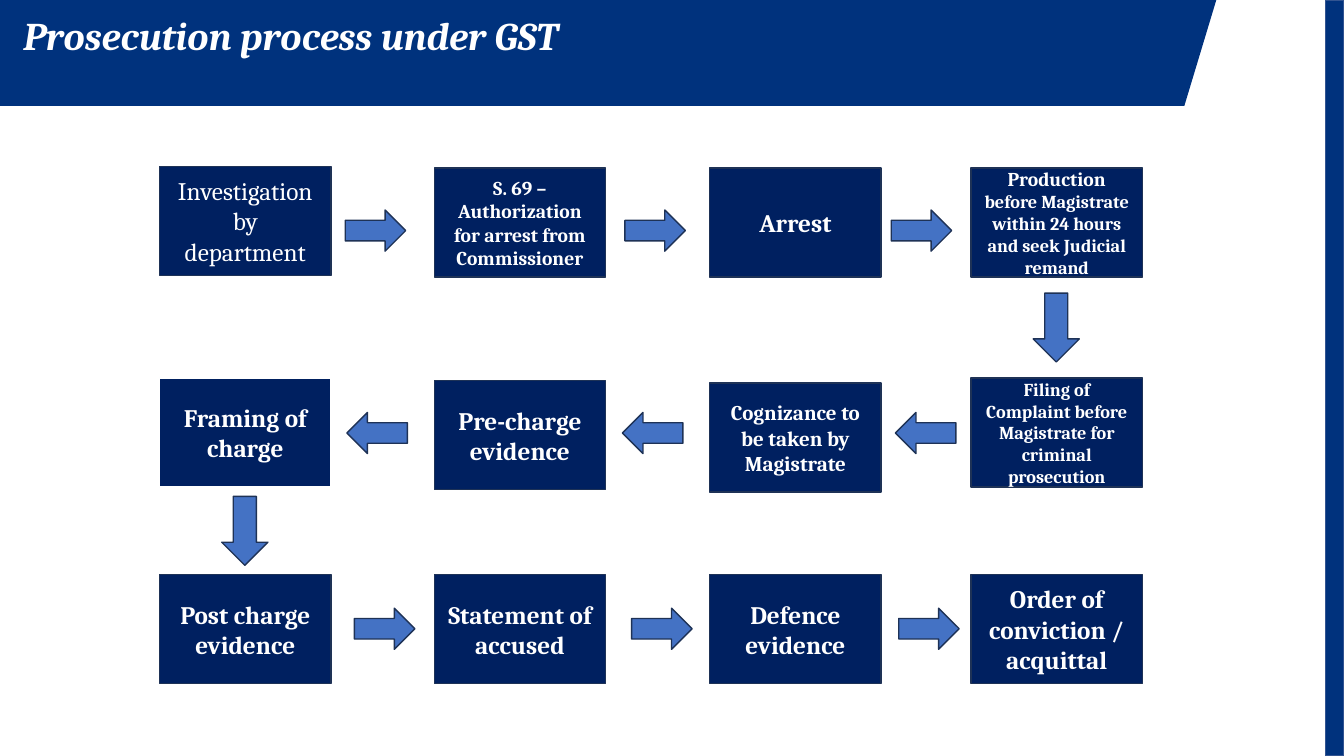
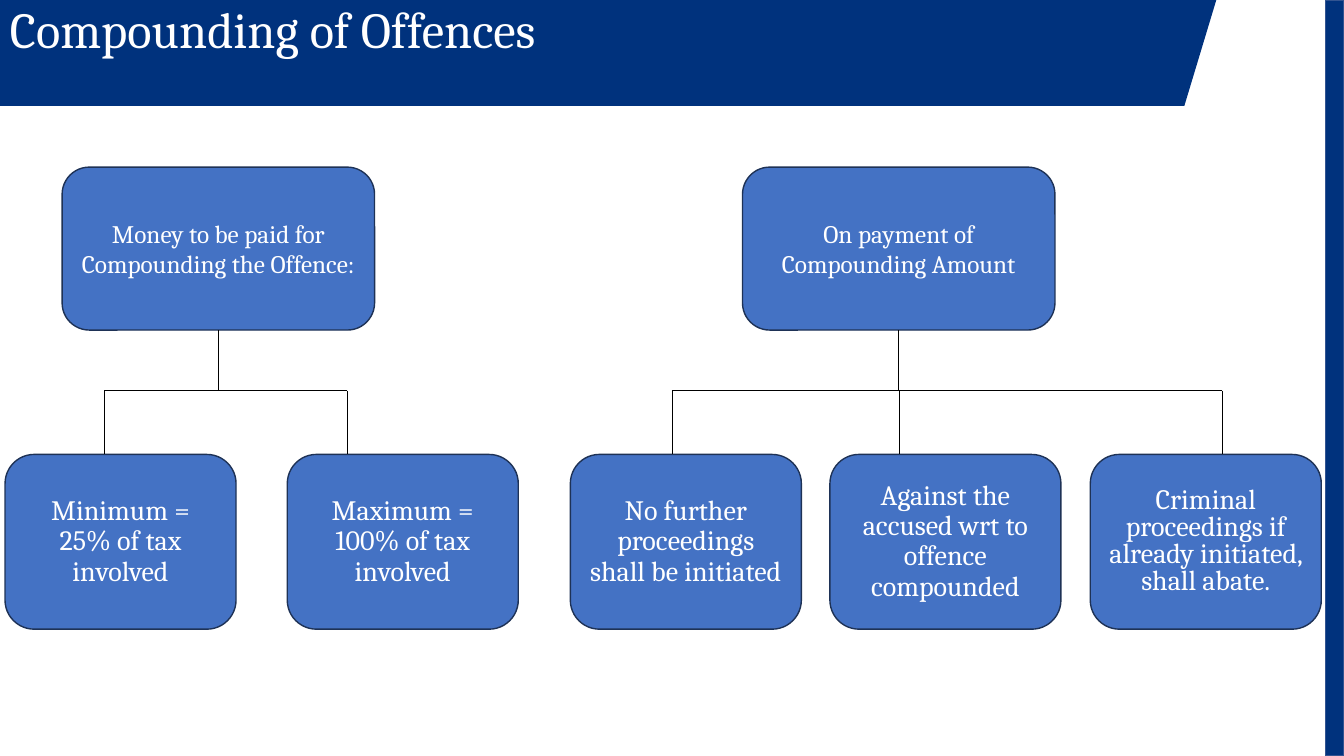
from lxml import etree
from pptx import Presentation
from pptx.dml.color import RGBColor
from pptx.enum.shapes import MSO_CONNECTOR, MSO_SHAPE
from pptx.enum.text import MSO_ANCHOR, PP_ALIGN
from pptx.oxml.ns import qn
from pptx.util import Inches, Pt

RECTANGLE = MSO_SHAPE.RECTANGLE
ROUNDED = MSO_SHAPE.ROUNDED_RECTANGLE
RIGHT = MSO_SHAPE.RIGHT_ARROW
LEFT = MSO_SHAPE.LEFT_ARROW
DOWN = MSO_SHAPE.DOWN_ARROW
STRAIGHT = MSO_CONNECTOR.STRAIGHT
TOP = MSO_ANCHOR.TOP
MIDDLE = MSO_ANCHOR.MIDDLE
ALIGN_LEFT = PP_ALIGN.LEFT
CENTER = PP_ALIGN.CENTER

WHITE = RGBColor(0xFF, 0xFF, 0xFF)
BLACK = RGBColor(0x00, 0x00, 0x00)
BAND_BLUE = RGBColor(0x00, 0x32, 0x7D)
STRIP_EDGE = RGBColor(0x32, 0x54, 0x91)
NAVY = RGBColor(0x00, 0x20, 0x60)
BLUE = RGBColor(0x44, 0x72, 0xC4)
EDGE = RGBColor(0x1E, 0x32, 0x56)

FONT = "Cambria"
COLUMNS, ROWS = 160, 90
WIDTH, HEIGHT = Inches(40 / 3), Inches(7.5)


def write_span(para, text, *, size, bold=False, italic=False):
    span = para.add_run()
    span.text = text
    span.font.name = FONT
    span.font.size = Pt(size)
    span.font.bold = bold
    span.font.italic = italic
    span.font.color.rgb = WHITE


def write_text(frame, *spans, align=CENTER, anchor=MIDDLE, spacing=None, **style):
    frame.word_wrap = True
    frame.vertical_anchor = anchor
    para = frame.paragraphs[0]
    para.alignment = align
    if spacing:
        para.line_spacing = spacing
        para.space_before = Pt(10)
    for text, size in spans:
        write_span(para, text, size=size, **style)


class Deck:
    def __init__(self):
        self.deck = Presentation()
        self.deck.slide_width, self.deck.slide_height = WIDTH, HEIGHT
        self.slide = None

    def x(self, columns):
        return round(WIDTH * columns / COLUMNS)

    def y(self, rows):
        return round(HEIGHT * rows / ROWS)

    def place(self, left, top, width, height):
        return self.x(left), self.y(top), self.x(width), self.y(height)

    def new_slide(self, title, size, left, top, **style):
        self.slide = self.deck.slides.add_slide(self.deck.slide_layouts[6])
        self.band()
        self.shape(RECTANGLE, 157.8, 0, 2.2, ROWS, BAND_BLUE, STRIP_EDGE)
        box = self.slide.shapes.add_textbox(*self.place(left, top, 140, 6))
        write_text(box.text_frame, (title, size), align=ALIGN_LEFT, anchor=TOP,
                   spacing=0.9, **style)

    def band(self):
        corners = [(0, 12.6), (141, 12.6), (144.8, 0)]
        builder = self.slide.shapes.build_freeform(0, 0)
        builder.add_line_segments([(self.x(c), self.y(r)) for c, r in corners])
        band = builder.convert_to_shape()
        band.shadow.inherit = False
        band.fill.solid()
        band.fill.fore_color.rgb = BAND_BLUE
        band.line.fill.background()

    def shape(self, kind, left, top, width, height, fill=BLUE, edge=EDGE):
        shape = self.slide.shapes.add_shape(kind, *self.place(left, top, width, height))
        shape.shadow.inherit = False
        shape.fill.solid()
        shape.fill.fore_color.rgb = fill
        shape.line.color.rgb = edge
        shape.line.width = Pt(1)
        return shape

    def step(self, left, top, spans, bold=True, edge=EDGE):
        box = self.shape(RECTANGLE, left, top, 20.4, 13, NAVY, edge)
        write_text(box.text_frame, *spans, bold=bold)

    def arrow(self, kind, left, top):
        width, height = (5.5, 8.2) if kind == DOWN else (7.2, 4.9)
        self.shape(kind, left, top, width, height)

    def node(self, left, top, width, height, text, size, spacing=None):
        box = self.shape(ROUNDED, left, top, width, height)
        write_text(box.text_frame, (text, size), spacing=spacing)

    def line(self, left, top, right, bottom):
        line = self.slide.shapes.add_connector(
            STRAIGHT, self.x(left), self.y(top), self.x(right), self.y(bottom))
        line.line.color.rgb = BLACK
        line.line.width = Pt(0.5)
        etree.SubElement(line._element.spPr, qn("a:effectLst"))

    def tree(self, left, root, leaves):
        top, width, height = 19.9, 37.2, 19.4
        bar, leaf_top = 46.5, 54.1
        center = left + width / 2
        self.node(left, top, width, height, root, 18)
        for leaf_left, drop, text, spacing in leaves:
            self.node(leaf_left, leaf_top, 27.5, 20.8, text, 20, spacing)
            self.line(drop, bar, drop, leaf_top)
        self.line(center, top + height, center, bar)
        self.line(leaves[0][1], bar, leaves[-1][1], bar)


def process_slide(deck):
    deck.new_slide("Prosecution process under GST", 28, 1.6, 1.4, bold=True, italic=True)
    lefts = (19, 51.7, 84.5, 115.6)
    rows = [
        ((19.8, 20, 20, 20), [
            [("Investigation by department", 18)],
            [("S. 69 – Authorization for arrest from Commissioner", 14)],
            [("Arrest", 18)],
            [("Production ", 14),
             ("before Magistrate within 24 hours and seek Judicial remand", 13)],
        ]),
        ((45, 45.3, 45.6, 45), [
            [("Framing of charge", 18)],
            [("Pre-charge evidence", 18)],
            [("Cognizance to be taken by Magistrate", 15)],
            [("Filing of Complaint before Magistrate for criminal prosecution", 13)],
        ]),
        ((68.4,) * 4, [
            [("Post charge evidence", 18)],
            [("Statement of accused", 18)],
            [("Defence evidence", 18)],
            [("Order of conviction / acquittal", 18)],
        ]),
    ]
    for row, (tops, steps) in enumerate(rows):
        for column, (left, top, spans) in enumerate(zip(lefts, tops, steps)):
            deck.step(left, top, spans, bold=(row, column) != (0, 0),
                      edge=WHITE if (row, column) == (1, 0) else EDGE)
    arrows = [
        (RIGHT, 25, (41.1, 74.4, 106.1)),
        (DOWN, 34.9, (123,)),
        (LEFT, 49.1, (41.3, 74.1, 106.6)),
        (DOWN, 59.1, (26.4,)),
        (RIGHT, 72.4, (42.2, 75.2, 107)),
    ]
    for kind, top, arrow_lefts in arrows:
        for left in arrow_lefts:
            deck.arrow(kind, left, top)


def compounding_slide(deck):
    deck.new_slide("Compounding of Offences", 36, 0, 0)
    deck.tree(7.4, "Money to be paid for Compounding the Offence:", [
        (0.6, 12.4, "Minimum = 25% of tax involved", 0.9),
        (34.2, 41.3, "Maximum = 100% of tax involved", 0.9),
    ])
    deck.tree(88.4, "On payment of Compounding Amount", [
        (67.9, 80, "No further proceedings shall be initiated", 0.9),
        (98.8, 107.1, "Against the accused wrt to offence compounded", 0.9),
        (129.8, 145.5, "Criminal proceedings if already initiated, shall abate.", 0.8),
    ])


def main():
    deck = Deck()
    process_slide(deck)
    compounding_slide(deck)
    deck.deck.save("out.pptx")


if __name__ == "__main__":
    main()
